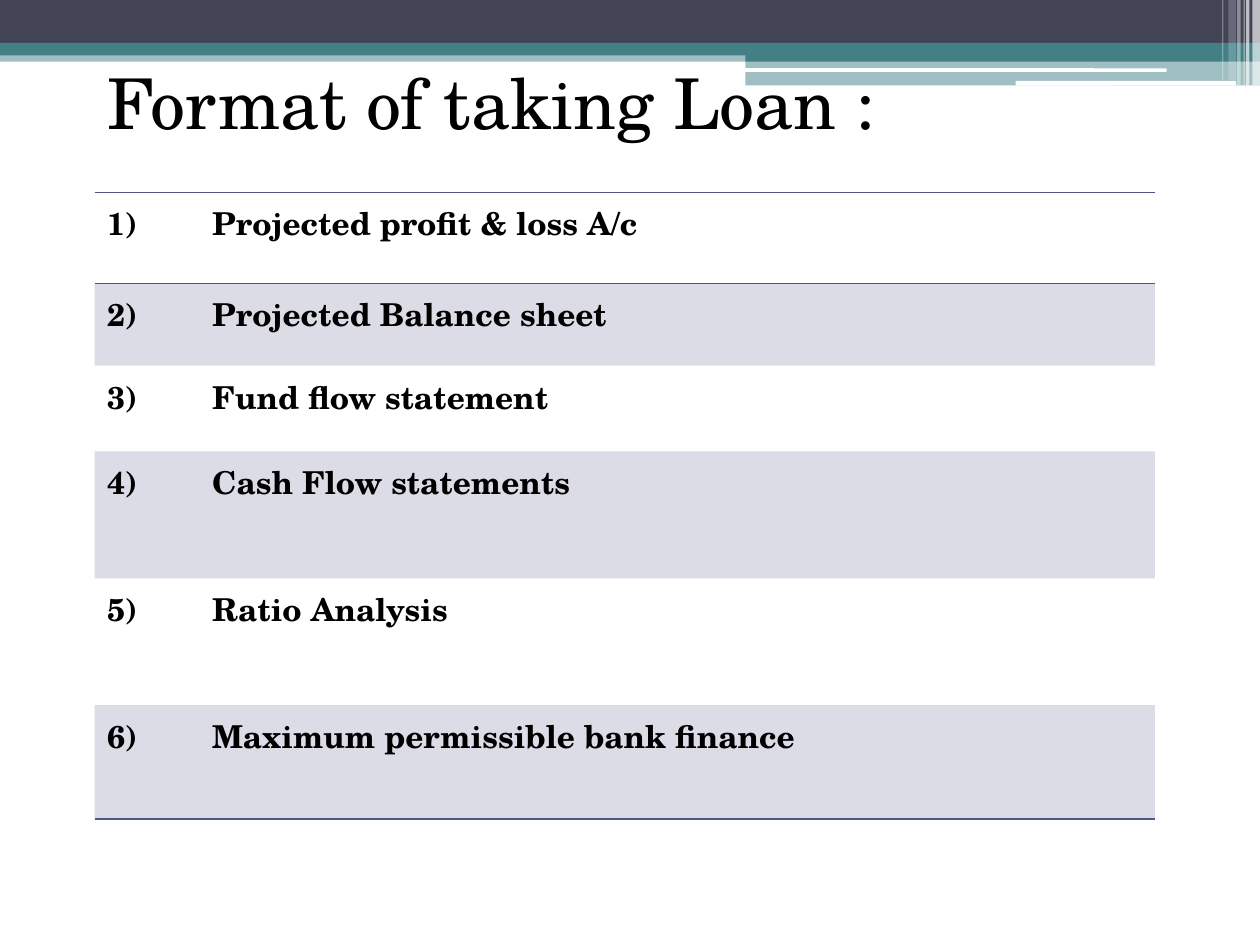
from lxml.etree import SubElement
from pptx import Presentation
from pptx.dml.color import RGBColor
from pptx.enum.shapes import MSO_SHAPE
from pptx.enum.text import MSO_ANCHOR, PP_ALIGN
from pptx.oxml.ns import qn
from pptx.util import Pt

COLORS = {"navy": "424456", "teal": "438086", "white": "FFFFFF",
          "indigo": "53548A", "text": "000000"}
FONT = "TeX Gyre Schola"
NO_STYLE = "{2D5ABB26-0587-4C30-8999-92F81FD0307C}"
BANDS = [
    (0, 28.8, 720, 6.5, "teal", 50),
    (0, 0, 720, 24.5, "navy", 100),
    (0, 24.5, 720, 7.2, "teal", 100),
    (426, 28.1, 294, 7.2, "teal", 100),
    (426, 35.3, 294, 13.5, "teal", 50),
]
WHITE_BARS = [(425.5, 39, 241.2, 2), (580.3, 46.3, 126, 2.6)]
STRIPES = [
    (715.7, 4.3, 48.8, 65),
    (712, 2, 48.8, 65),
    (710.6, 0.7, 48.8, 60),
    (707, 2, 48.8, 40),
    (702, 4.3, 46, 20),
    (698.4, 0.7, 46, 30),
]
ITEMS = ["Projected profit & loss A/c", "Projected Balance sheet",
         "Fund flow statement", "Cash Flow statements", "Ratio Analysis",
         "Maximum permissible bank finance"]
COLUMN_WIDTHS = [60, 546]
ROW_HEIGHTS = [52, 47, 49, 72.5, 72.5, 65]


def fill_solid(fill, color, opacity=100):
    """Apply a solid fill with an opacity in percent."""
    fill.solid()
    fill.fore_color.rgb = RGBColor.from_string(COLORS[color])
    if opacity < 100:
        element = fill._xPr.find(qn("a:solidFill"))[0]
        SubElement(element, qn("a:alpha"), val=str(opacity * 1000))


def style_font(font, size, bold=False):
    """Set the typeface, size, weight and text colour."""
    font.name = FONT
    font.size = Pt(size)
    font.bold = bold
    font.color.rgb = RGBColor.from_string(COLORS["text"])


def add_bar(slide, box, color, opacity=100, kind=MSO_SHAPE.RECTANGLE):
    """Add one borderless bar in the given box."""
    shape = slide.shapes.add_shape(kind, *map(Pt, box))
    shape.shadow.inherit = False
    shape.line.fill.background()
    fill_solid(shape.fill, color, opacity)


def add_header(slide):
    """Draw the layered header bands and the stripes at the right end."""
    for *box, color, opacity in BANDS:
        add_bar(slide, box, color, opacity)
    for box in WHITE_BARS:
        add_bar(slide, box, "white", kind=MSO_SHAPE.ROUNDED_RECTANGLE)
    for left, width, height, opacity in STRIPES:
        add_bar(slide, (left, 0, width, height), "white", opacity)


def add_title(slide, box, text):
    """Place the title placeholder in front of the header."""
    title = slide.shapes.title
    title.left, title.top, title.width, title.height = map(Pt, box)
    frame = title.text_frame
    frame.word_wrap = True
    frame.vertical_anchor = MSO_ANCHOR.TOP
    paragraph = frame.paragraphs[0]
    paragraph.text = text
    paragraph.alignment = PP_ALIGN.LEFT
    paragraph.line_spacing = 1
    style_font(paragraph.font, 40)
    slide.shapes._spTree.append(title._element)


def add_border(cell, side):
    """Add a one-point rule on a cell side, named T or B."""
    line = SubElement(cell._tc.get_or_add_tcPr(), qn(f"a:ln{side}"), w=str(Pt(1)))
    fill = SubElement(line, qn("a:solidFill"))
    SubElement(fill, qn("a:srgbClr"), val=COLORS["indigo"])


def add_list_table(slide, left, top, items):
    """Add the numbered table with shaded alternate rows."""
    frame = slide.shapes.add_table(
        len(items), len(COLUMN_WIDTHS), Pt(left), Pt(top),
        Pt(sum(COLUMN_WIDTHS)), Pt(sum(ROW_HEIGHTS)))
    table = frame.table
    table.first_row = table.horz_banding = False
    table._tbl.tblPr.find(qn("a:tableStyleId")).text = NO_STYLE
    for column, width in zip(table.columns, COLUMN_WIDTHS):
        column.width = Pt(width)
    for index, (item, height) in enumerate(zip(items, ROW_HEIGHTS)):
        row = table.rows[index]
        row.height = Pt(height)
        sides = {0: "TB", len(items) - 1: "B"}.get(index, "")
        for cell, text in zip(row.cells, (f"{index + 1})", item)):
            cell.text = text
            style_font(cell.text_frame.paragraphs[0].font, 18, bold=True)
            for side in sides:
                add_border(cell, side)
            if index % 2:
                fill_solid(cell.fill, "indigo", 20)
            else:
                cell.fill.background()


def main():
    """Build and save the presentation."""
    presentation = Presentation()
    presentation.slide_width, presentation.slide_height = Pt(720), Pt(540)
    slide = presentation.slides.add_slide(presentation.slide_layouts[5])
    fill_solid(slide.background.fill, "white")
    add_header(slide)
    add_title(slide, (54, 30.2, 624, 55.4), "Format of taking Loan :")
    add_list_table(slide, 54, 110, ITEMS)
    presentation.save("out.pptx")


if __name__ == "__main__":
    main()
